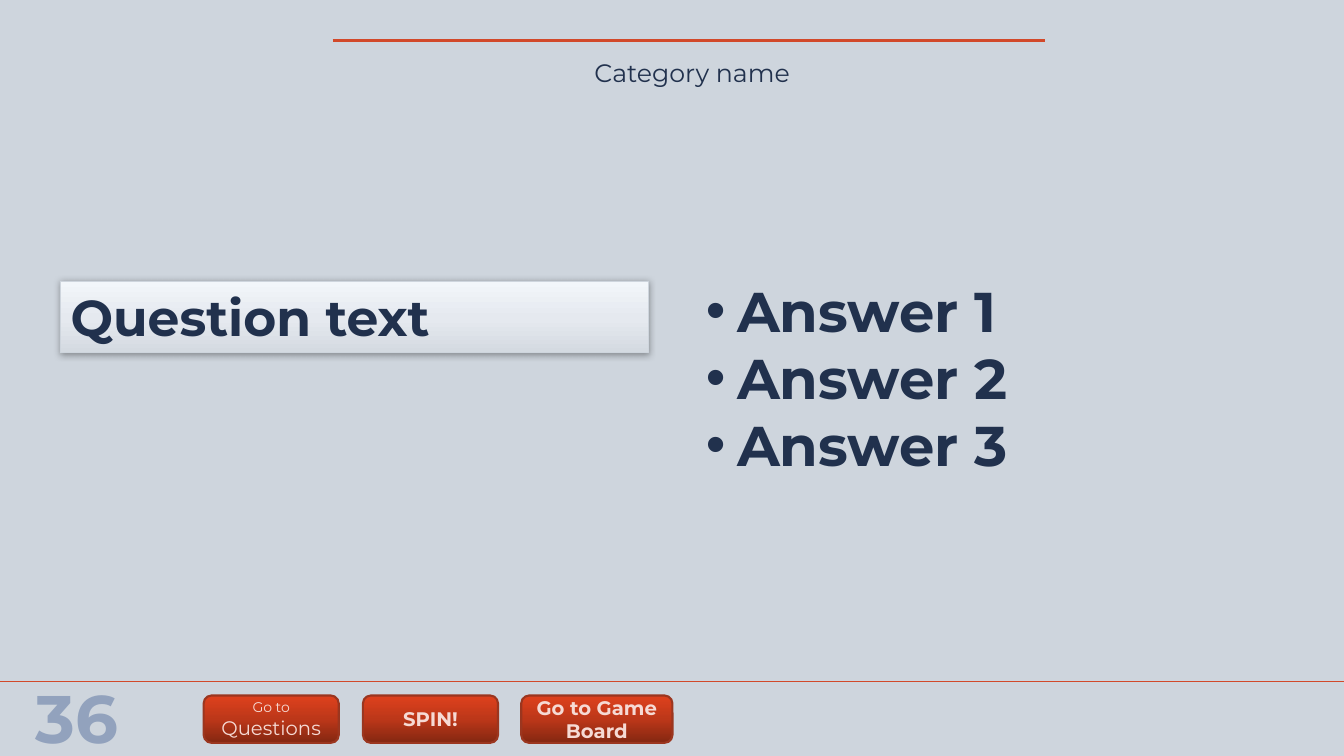
from pptx import Presentation
from pptx.dml.color import RGBColor
from pptx.enum.shapes import MSO_CONNECTOR as Connector, MSO_SHAPE as Preset
from pptx.enum.text import MSO_ANCHOR as Anchor, MSO_AUTO_SIZE as AutoSize, PP_ALIGN as Align
from pptx.oxml.ns import qn
from pptx.util import Inches, Pt
from lxml.etree import SubElement

COLORS = {
    "background": "CED5DD",
    "accent": "D2492A",
    "ink": "21314D",
    "number": "92A2BD",
    "button_line": "9B361F",
    "button_text": "F6DAD4",
    "shadow": "000000",
}
BUTTON_STOPS = [(0, "842711"), (50, "BC3719"), (100, "DF411D")]
QUESTION_STOPS = [(0, "D4DAE1"), (48, "E5E9EF"), (100, "F2F6FA")]


def color(name):
    return RGBColor.from_string(COLORS[name])


class QuizPage:
    font = "Montserrat"

    def __init__(self, deck):
        self.page = deck.slides.add_slide(deck.slide_layouts[1])
        self.page.background.fill.solid()
        self.page.background.fill.fore_color.rgb = color("background")

    def place(self, shape, left, top, width, height):
        shape.left, shape.top = Inches(left), Inches(top)
        shape.width, shape.height = Inches(width), Inches(height)

    def style(self, para, size, ink, bold=False, align=Align.LEFT):
        para.alignment = align
        para.space_before = Pt(0)
        para.line_spacing = 1.0
        para.font.name = self.font
        para.font.bold = bold
        para.font.color.rgb = color(ink)
        if size:
            para.font.size = Pt(size)

    def rule(self, left, right, top, weight):
        line = self.page.shapes.add_connector(
            Connector.STRAIGHT, Inches(left), Inches(top), Inches(right), Inches(top))
        line.line.color.rgb = color("accent")
        line.line.width = Pt(weight)
        SubElement(line._element.spPr, qn("a:effectLst"))

    def gradient(self, shape, stops, outline, weight):
        shape.fill.gradient()
        shape.fill.gradient_angle = 90
        stop_list = shape._element.spPr.find(qn("a:gradFill")).find(qn("a:gsLst"))
        for stop in list(stop_list):
            stop_list.remove(stop)
        for position, value in stops:
            stop = SubElement(stop_list, qn("a:gs"), pos=str(position * 1000))
            SubElement(stop, qn("a:srgbClr"), val=value)
        shape.line.color.rgb = color(outline)
        shape.line.width = Pt(weight)
        shape.shadow.inherit = False

    def label(self, text, area, size, ink, bold=False):
        box = self.page.shapes.add_textbox(*map(Inches, area))
        box.text_frame.word_wrap = True
        para = box.text_frame.paragraphs[0]
        para.text = text
        self.style(para, size, ink, bold, Align.CENTER)

    def question(self, text, area):
        title = self.page.shapes.title
        self.place(title, *area)
        self.gradient(title, QUESTION_STOPS, "background", 1)
        effects = title._element.spPr.find(qn("a:effectLst"))
        shadow = SubElement(effects, qn("a:outerShdw"), blurRad=str(Pt(5)),
                            dist=str(Pt(1)), dir="5400000", rotWithShape="0")
        shade = SubElement(shadow, qn("a:srgbClr"), val=COLORS["shadow"])
        SubElement(shade, qn("a:alpha"), val="32000")
        frame = title.text_frame
        frame.text = text
        frame.auto_size = AutoSize.NONE
        frame.vertical_anchor = Anchor.TOP
        self.style(frame.paragraphs[0], 36, "ink", True)

    def answers(self, items, area):
        body = self.page.placeholders[1]
        self.place(body, *area)
        frame = body.text_frame
        frame.text = "\n".join(items)
        frame.auto_size = AutoSize.NONE
        frame.vertical_anchor = Anchor.TOP
        for para in frame.paragraphs:
            props = para._p.get_or_add_pPr()
            props.set("marL", str(Inches(0.31)))
            props.set("indent", str(-Inches(0.31)))
            SubElement(props, qn("a:buFont"), typeface="Arial")
            SubElement(props, qn("a:buChar"), char="•")
            self.style(para, 40, "ink", True)

    def button(self, lines, left, width, bold):
        shape = self.page.shapes.add_shape(
            Preset.ROUNDED_RECTANGLE, Inches(left), Inches(6.9), Inches(width), Inches(0.47))
        self.gradient(shape, BUTTON_STOPS, "button_line", 1.5)
        frame = shape.text_frame
        frame.word_wrap = True
        frame.vertical_anchor = Anchor.MIDDLE
        para = frame.paragraphs[0]
        self.style(para, None, "button_text", bold, Align.CENTER)
        for index, (text, size) in enumerate(lines):
            if index:
                para.add_line_break()
            span = para.add_run()
            span.text = text
            span.font.size = Pt(size)


def main():
    deck = Presentation()
    deck.slide_width, deck.slide_height = Inches(13.33), Inches(7.5)
    quiz = QuizPage(deck)
    quiz.rule(0, 13.33, 6.76, 1)
    quiz.rule(3.3, 10.36, 0.4, 2)
    quiz.label("36", (0.21, 6.66, 1.1, 0.91), 48, "number", True)
    quiz.label("Category name", (3.36, 0.52, 7.01, 0.4), 18, "ink")
    quiz.question("Question text", (0.6, 2.79, 5.83, 0.71))
    quiz.answers([f"Answer {number}" for number in range(1, 4)], (6.9, 2.69, 5.83, 2.12))
    quiz.button([("Go to", 10), ("Questions", 14)], 2.02, 1.34, False)
    quiz.button([("SPIN!", 14)], 3.6, 1.34, True)
    quiz.button([("Go to Game Board", 14)], 5.17, 1.5, True)
    deck.save("out.pptx")


if __name__ == "__main__":
    main()
